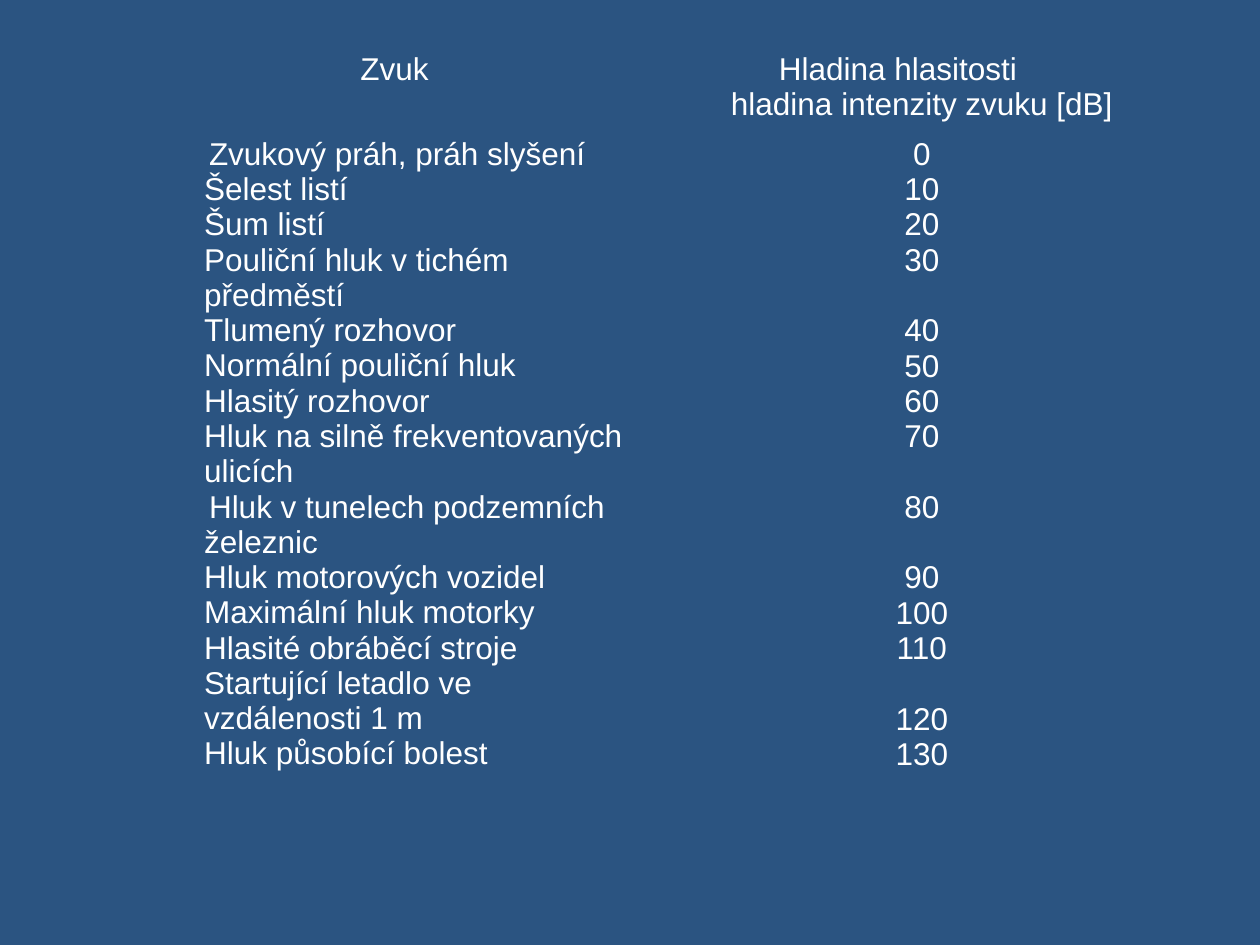
import pptx
import pptx.dml.color
import pptx.enum.text
import pptx.oxml.ns
import pptx.util

Cm = pptx.util.Cm
Pt = pptx.util.Pt
RGBColor = pptx.dml.color.RGBColor
PP_ALIGN = pptx.enum.text.PP_ALIGN

BLUE = RGBColor(0x2B, 0x54, 0x81)
WHITE = RGBColor(0xFF, 0xFF, 0xFF)
PLAIN_TABLE = "{2D5ABB26-0587-4C30-8999-92F81FD0307C}"
HANGING = Cm(0.96)
LINE = Pt(20.2)

SOUNDS = [
    """Zvukový práh, práh slyšení
Šelest listí
Šum listí
Pouliční hluk v tichém předměstí
Tlumený rozhovor
Normální pouliční hluk
Hlasitý rozhovor
Hluk na silně frekventovaných ulicích""",
    """Hluk v tunelech podzemních železnic
Hluk motorových vozidel
Maximální hluk motorky
Hlasité obráběcí stroje
Startující letadlo ve vzdálenosti 1 m
Hluk působící bolest""",
]
LEVELS = ["0\n10\n20\n30", "40\n50\n60\n70", "80", "90\n100\n110", "120\n130"]


class Deck:
    font = "Arial"
    size = Pt(18)

    def __init__(self):
        self.prs = pptx.Presentation()
        self.prs.slide_width = Cm(25.4)
        self.prs.slide_height = Cm(19.05)
        self.s = self.prs.slides.add_slide(self.prs.slide_layouts[6])
        fill = self.s.background.fill
        fill.solid()
        fill.fore_color.rgb = BLUE

    def table(self, left, top, widths, heights):
        sp = self.s.shapes.add_table(
            len(heights), len(widths), left, top, sum(widths), sum(heights))
        tbl = sp.table
        tbl.first_row = tbl.horz_banding = False
        style = tbl._tbl.tblPr.find(pptx.oxml.ns.qn("a:tableStyleId"))
        style.text = PLAIN_TABLE
        for col, width in zip(tbl.columns, widths):
            col.width = width
        for row, height in zip(tbl.rows, heights):
            row.height = height
        return tbl

    def cell(self, cell, paragraphs, align, indent=0, gap=0):
        cell.fill.background()
        cell.margin_right = Cm(0.3)
        tf = cell.text_frame
        for i, text in enumerate(paragraphs):
            p = tf.add_paragraph() if i else tf.paragraphs[0]
            p.text = text.replace("\n", "\v")
            p.alignment = align
            if i:
                p.space_before = gap
            pPr = p._p.get_or_add_pPr()
            pPr.set("marL", str(int(HANGING)))
            pPr.set("indent", str(int(indent)))
            p.font.name = self.font
            p.font.size = self.size
            p.font.color.rgb = WHITE


def main():
    deck = Deck()
    tbl = deck.table(Cm(2.9), Cm(0.91), [Cm(10.15)] * 2, [Cm(1.72), Cm(14.03)])
    headings = ["Zvuk", "Hladina hlasitosti\nhladina intenzity zvuku [dB]"]
    for col, heading in enumerate(headings):
        deck.cell(tbl.cell(0, col), [heading], PP_ALIGN.CENTER, -HANGING)
    deck.cell(tbl.cell(1, 0), SOUNDS, PP_ALIGN.LEFT, Cm(0.1))
    deck.cell(tbl.cell(1, 1), LEVELS, PP_ALIGN.CENTER, gap=LINE)
    deck.prs.save("out.pptx")


if __name__ == "__main__":
    main()
